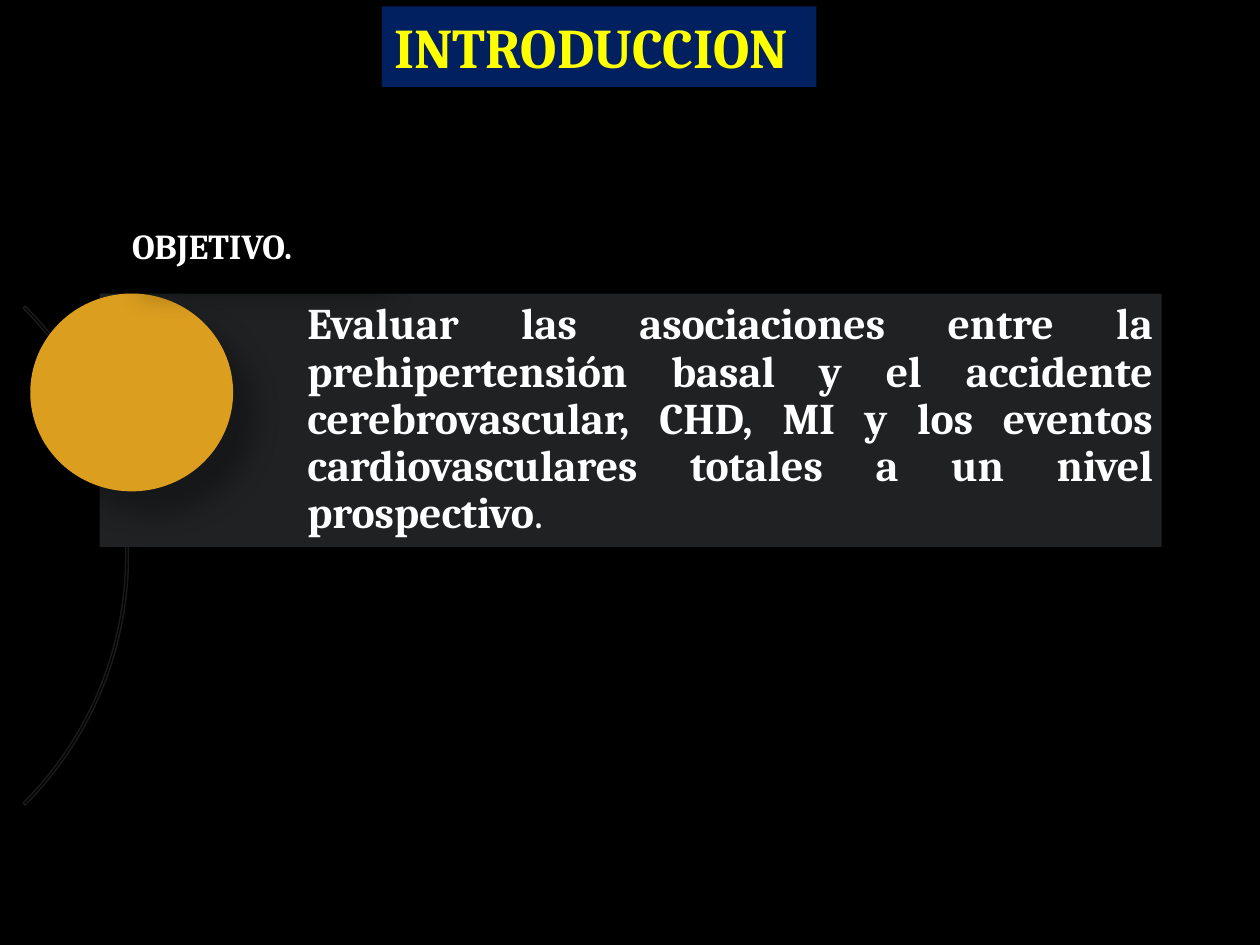
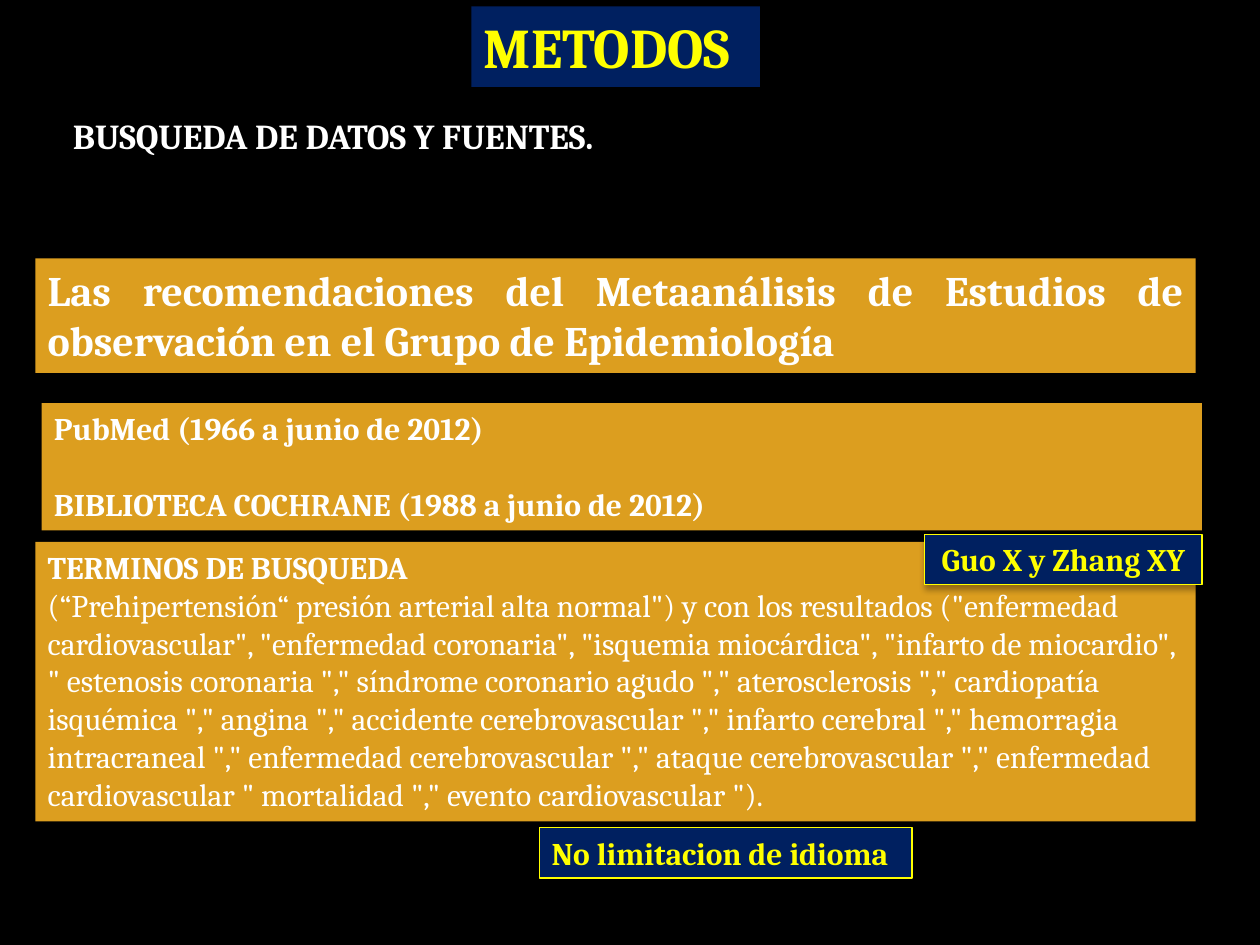
"""Builds two slides on prehypertension: the objective and the search methods."""
from dataclasses import dataclass
from typing import Optional

from lxml.etree import SubElement
from pptx import Presentation
from pptx.dml.color import RGBColor
from pptx.enum.shapes import MSO_SHAPE
from pptx.enum.text import MSO_ANCHOR, MSO_AUTO_SIZE, PP_ALIGN
from pptx.oxml.ns import qn
from pptx.util import Inches, Pt

FONT = "Cambria"
COLORS = {
    "black": "000000",
    "white": "FFFFFF",
    "navy": "002060",
    "yellow": "FFFF00",
    "gold": "DC9E1F",
    "panel": "1F2123",
    "arc": "191A1C",
}


@dataclass(frozen=True)
class Shadow:
    """An outer shadow: opacity in percent, blur and distance in points, angle in degrees."""
    alpha: int
    blur: float
    dist: float
    angle: int


@dataclass(frozen=True)
class Box:
    """A preset shape with its place in inches and its look."""
    left: float
    top: float
    width: float
    height: float
    fill: Optional[str] = None
    line: Optional[str] = None
    weight: float = 0.75
    shadow: Optional[Shadow] = None
    shape: MSO_SHAPE = MSO_SHAPE.RECTANGLE


@dataclass(frozen=True)
class Run:
    """A stretch of text of one weight."""
    text: str
    bold: bool = True


SOFT = Shadow(30, 15, 18, 45)
TIGHT = Shadow(32, 3.5, 2.2, 90)
SEARCH_TERMS = (
    '(“Prehipertensión“ presión arterial alta normal") y con los resultados '
    '("enfermedad cardiovascular", "enfermedad coronaria", "isquemia miocárdica", '
    '"infarto de miocardio", " estenosis coronaria "," síndrome coronario agudo "," '
    'aterosclerosis "," cardiopatía isquémica "," angina "," accidente '
    'cerebrovascular "," infarto cerebral "," hemorragia intracraneal "," enfermedad '
    'cerebrovascular "," ataque cerebrovascular "," enfermedad cardiovascular " '
    'mortalidad "," evento cardiovascular ").'
)


def rgb(name: str) -> RGBColor:
    """Return a palette colour."""
    return RGBColor.from_string(COLORS[name])


def cast_shadow(sp, shadow: Shadow) -> None:
    """Give a shape an outer shadow."""
    sp.shadow.inherit = False
    effects = sp._element.spPr.find(qn("a:effectLst"))
    outer = SubElement(effects, qn("a:outerShdw"), blurRad=str(Pt(shadow.blur)),
                       dist=str(Pt(shadow.dist)), dir=str(shadow.angle * 60000),
                       algn="tl", rotWithShape="0")
    color = SubElement(outer, qn("a:srgbClr"), val=COLORS["black"])
    SubElement(color, qn("a:alpha"), val=str(shadow.alpha * 1000))


def draw_box(s, box: Box):
    """Draw a box on a slide and return its shape."""
    sp = s.shapes.add_shape(box.shape, Inches(box.left), Inches(box.top),
                            Inches(box.width), Inches(box.height))
    sp.shadow.inherit = False
    if box.fill:
        sp.fill.solid()
        sp.fill.fore_color.rgb = rgb(box.fill)
    else:
        sp.fill.background()
    if box.line:
        sp.line.color.rgb = rgb(box.line)
        sp.line.width = Pt(box.weight)
    else:
        sp.line.fill.background()
    if box.shadow:
        cast_shadow(sp, box.shadow)
    return sp


def write(sp, *paragraphs: list[Run], size: float = 18, color: str = "white",
          align: PP_ALIGN = PP_ALIGN.LEFT, anchor: MSO_ANCHOR = MSO_ANCHOR.TOP,
          spacing: float = 1.0, gap: float = 0, left: float = 0.1,
          right: float = 0.1) -> None:
    """Write paragraphs of runs into a shape."""
    tf = sp.text_frame
    tf.word_wrap = True
    tf.auto_size = MSO_AUTO_SIZE.NONE
    tf.vertical_anchor = anchor
    tf.margin_left, tf.margin_right = Inches(left), Inches(right)
    tf.margin_top = tf.margin_bottom = Inches(0.05)
    for i, runs in enumerate(paragraphs):
        p = tf.add_paragraph() if i else tf.paragraphs[0]
        p.alignment = align
        p.line_spacing = spacing
        p.space_before = Inches(gap if i else 0)
        for run in runs:
            r = p.add_run()
            r.text = run.text
            r.font.name = FONT
            r.font.size = Pt(size)
            r.font.bold = run.bold
            r.font.color.rgb = rgb(color)


def add_slide(prs, title: str, left: float, width: float):
    """Add a black slide with a navy title band."""
    s = prs.slides.add_slide(prs.slide_layouts[5])
    s.background.fill.solid()
    s.background.fill.fore_color.rgb = rgb("black")
    sp = s.shapes.title
    sp.left, sp.top = Inches(left), Inches(0.05)
    sp.width, sp.height = Inches(width), Inches(0.64)
    sp.fill.solid()
    sp.fill.fore_color.rgb = rgb("navy")
    cast_shadow(sp, TIGHT)
    write(sp, [Run(title)], size=32, color="yellow")
    return s


def add_heading(s, text: str, left: float, top: float, width: float) -> None:
    """Add a white section heading on black."""
    sp = draw_box(s, Box(left, top, width, 0.44, "black", shadow=SOFT))
    write(sp, [Run(text)], size=20)


def add_panel(s, left: float, top: float, height: float,
              *paragraphs: list[Run], **text_format) -> None:
    """Add a wide gold panel of text."""
    sp = draw_box(s, Box(left, top, 9.21, height, "gold"))
    write(sp, *paragraphs, **text_format)


def add_label(s, text: str, left: float, top: float, width: float,
              align: PP_ALIGN = PP_ALIGN.LEFT) -> None:
    """Add a navy label with a yellow outline."""
    sp = draw_box(s, Box(left, top, width, 0.4, "navy", "yellow", shadow=TIGHT))
    write(sp, [Run(text)], color="yellow", align=align)


def build_introduction(prs) -> None:
    """Build the slide with the objective."""
    s = add_slide(prs, "INTRODUCCION", 3.03, 3.45)
    arc = draw_box(s, Box(-4.58, 1.61, 5.6, 5.6, line="arc", weight=0.85,
                          shape=MSO_SHAPE.BLOCK_ARC))
    for i, value in enumerate((189, 27, 0.004)):
        arc.adjustments[i] = value
    objective = draw_box(s, Box(0.79, 2.33, 8.43, 2.01, "panel"))
    write(objective,
          [Run("Evaluar las asociaciones entre la prehipertensión basal y el accidente "
               "cerebrovascular, CHD, MI y los eventos cardiovasculares totales a un "
               "nivel prospectivo"), Run(".", bold=False)],
          size=25, align=PP_ALIGN.JUSTIFY, anchor=MSO_ANCHOR.MIDDLE, spacing=0.9,
          left=1.65, right=0.07)
    draw_box(s, Box(0.24, 2.33, 1.61, 1.57, "gold", shadow=SOFT, shape=MSO_SHAPE.OVAL))
    add_heading(s, "OBJETIVO.", 0.95, 1.73, 1.97)


def build_methods(prs) -> None:
    """Build the slide with the data search."""
    s = add_slide(prs, "METODOS", 3.74, 2.29)
    add_heading(s, "BUSQUEDA DE DATOS Y FUENTES.", 0.48, 0.86, 4.87)
    add_panel(s, 0.33, 3.2, 1.01, [Run("PubMed (1966 a junio de 2012)")],
              [Run("BIBLIOTECA COCHRANE (1988 a junio de 2012)")], gap=0.3)
    add_panel(s, 0.28, 2.05, 0.91,
              [Run("Las recomendaciones del Metaanálisis de Estudios de observación "
                   "en el Grupo de Epidemiología")],
              size=24, align=PP_ALIGN.JUSTIFY)
    add_panel(s, 0.28, 4.3, 2.22, [Run("TERMINOS DE BUSQUEDA")],
              [Run(SEARCH_TERMS, bold=False)])
    add_label(s, "No limitacion de idioma", 4.28, 6.57, 2.96)
    add_label(s, "Guo X y Zhang XY", 7.34, 4.24, 2.2, PP_ALIGN.CENTER)


def main() -> None:
    """Build and save the presentation."""
    prs = Presentation()
    prs.slide_width, prs.slide_height = Inches(10), Inches(7.5)
    build_introduction(prs)
    build_methods(prs)
    prs.save("out.pptx")


if __name__ == "__main__":
    main()
